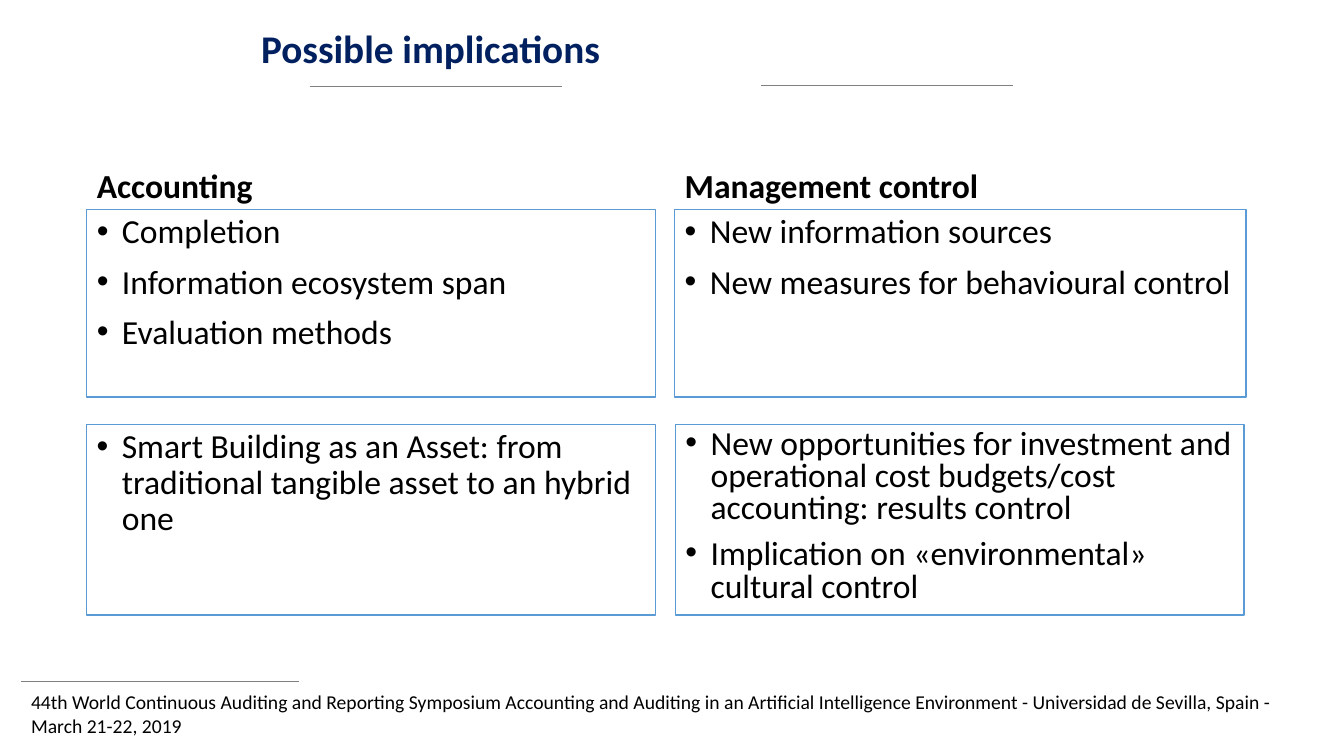
from lxml import etree
from pptx import Presentation
from pptx.dml.color import RGBColor
from pptx.enum.shapes import MSO_CONNECTOR, MSO_SHAPE
from pptx.enum.text import MSO_ANCHOR, MSO_AUTO_SIZE, PP_ALIGN
from pptx.oxml.ns import qn
from pptx.util import Inches, Pt

NAVY = RGBColor(0x00, 0x20, 0x60)
BLACK = RGBColor(0x00, 0x00, 0x00)
WHITE = RGBColor(0xFF, 0xFF, 0xFF)
GRAY = RGBColor(0x80, 0x80, 0x80)
BLUE = RGBColor(0x5B, 0x9B, 0xD5)

COMPARISON_LAYOUT = 4
LEFT_COLUMN = (0.86, 5.64)
RIGHT_COLUMN = (6.69, 5.67)
VENUE = (
    "44th World Continuous Auditing and Reporting Symposium Accounting and Auditing in an "
    "Artificial Intelligence Environment - Universidad de Sevilla, Spain - March 21-22, 2019"
)


class SlideBuilder:
    font_name = "Calibri"
    text_size = 24

    def __init__(self, slide):
        self.slide = slide
        self.placeholders = {p.placeholder_format.idx: p for p in slide.placeholders}

    def place(self, shape, left, top, width, height):
        shape.left, shape.top = Inches(left), Inches(top)
        shape.width, shape.height = Inches(width), Inches(height)

    def set_text(self, shape, lines, size=text_size, color=BLACK, bold=False,
                 anchor=MSO_ANCHOR.TOP, spacing=0.9, bullets=False):
        text_frame = shape.text_frame
        text_frame.text = "\n".join(lines)
        text_frame.word_wrap = True
        text_frame.auto_size = MSO_AUTO_SIZE.NONE
        text_frame.vertical_anchor = anchor
        for index, paragraph in enumerate(text_frame.paragraphs):
            if bullets:
                self.add_bullet(paragraph)
            paragraph.alignment = PP_ALIGN.LEFT
            paragraph.line_spacing = spacing
            paragraph.space_before = Pt(10 if index else 0)
            for run in paragraph.runs:
                run.font.name = self.font_name
                run.font.size = Pt(size)
                run.font.bold = bold
                run.font.color.rgb = color

    def add_bullet(self, paragraph):
        properties = paragraph._p.get_or_add_pPr()
        properties.set("marL", str(Inches(0.25)))
        properties.set("indent", str(-Inches(0.25)))
        etree.SubElement(properties, qn("a:buFont")).set("typeface", "Arial")
        etree.SubElement(properties, qn("a:buChar")).set("char", "•")

    def title(self, text):
        shape = self.slide.shapes.title
        self.place(shape, 2.49, 0.17, 6.11, 0.66)
        self.set_text(shape, [text], size=28, color=NAVY, bold=True, anchor=MSO_ANCHOR.MIDDLE)

    def heading(self, index, column, text):
        shape = self.placeholders[index]
        left, width = column
        self.place(shape, left, 1.19, width, 0.9)
        self.set_text(shape, [text], bold=True, anchor=MSO_ANCHOR.BOTTOM)

    def frame(self, shape, items, spacing=0.9):
        """Fill, outline and bullet a list box."""
        shape.fill.solid()
        shape.fill.fore_color.rgb = WHITE
        shape.line.color.rgb = BLUE
        shape.line.width = Pt(1)
        self.set_text(shape, items, spacing=spacing, bullets=True)

    def upper_list(self, index, column, items):
        shape = self.placeholders[index]
        left, width = column
        self.place(shape, left, 2.08, width, 1.86)
        self.frame(shape, items)

    def lower_list(self, left, items, spacing=0.9):
        shape = self.slide.shapes.add_shape(
            MSO_SHAPE.RECTANGLE, Inches(left), Inches(4.21), Inches(5.64), Inches(1.89))
        shape.shadow.inherit = False
        self.frame(shape, items, spacing)

    def rule(self, left, right, y):
        line = self.slide.shapes.add_connector(
            MSO_CONNECTOR.STRAIGHT, Inches(left), Inches(y), Inches(right), Inches(y))
        line.line.color.rgb = GRAY
        line.line.width = Pt(0.5)
        etree.SubElement(line._element.spPr, qn("a:effectLst"))

    def footer(self, text):
        box = self.slide.shapes.add_textbox(
            Inches(0.21), Inches(6.8), Inches(12.76), Inches(0.5))
        self.set_text(box, [text], size=14, spacing=1.0)


def main():
    presentation = Presentation()
    presentation.slide_width = Inches(13.33)
    presentation.slide_height = Inches(7.5)
    layout = presentation.slide_layouts[COMPARISON_LAYOUT]
    builder = SlideBuilder(presentation.slides.add_slide(layout))

    for left, right, y in ((3.07, 5.57, 0.86), (7.55, 10.05, 0.85), (0.21, 2.97, 6.76)):
        builder.rule(left, right, y)
    builder.footer(VENUE)
    builder.title("Possible implications")

    builder.heading(1, LEFT_COLUMN, "Accounting")
    builder.upper_list(2, LEFT_COLUMN, [
        "Completion", "Information ecosystem span", "Evaluation methods"])
    builder.heading(3, RIGHT_COLUMN, "Management control")
    builder.upper_list(4, RIGHT_COLUMN, [
        "New information sources", "New measures for behavioural control"])

    builder.lower_list(0.86, [
        "Smart Building as an Asset: from traditional tangible asset to an hybrid one"])
    builder.lower_list(6.7, [
        "New opportunities for investment and operational cost budgets/cost accounting: "
        "results control",
        "Implication on «environmental» cultural control"], spacing=0.8)

    presentation.save("out.pptx")


if __name__ == "__main__":
    main()
